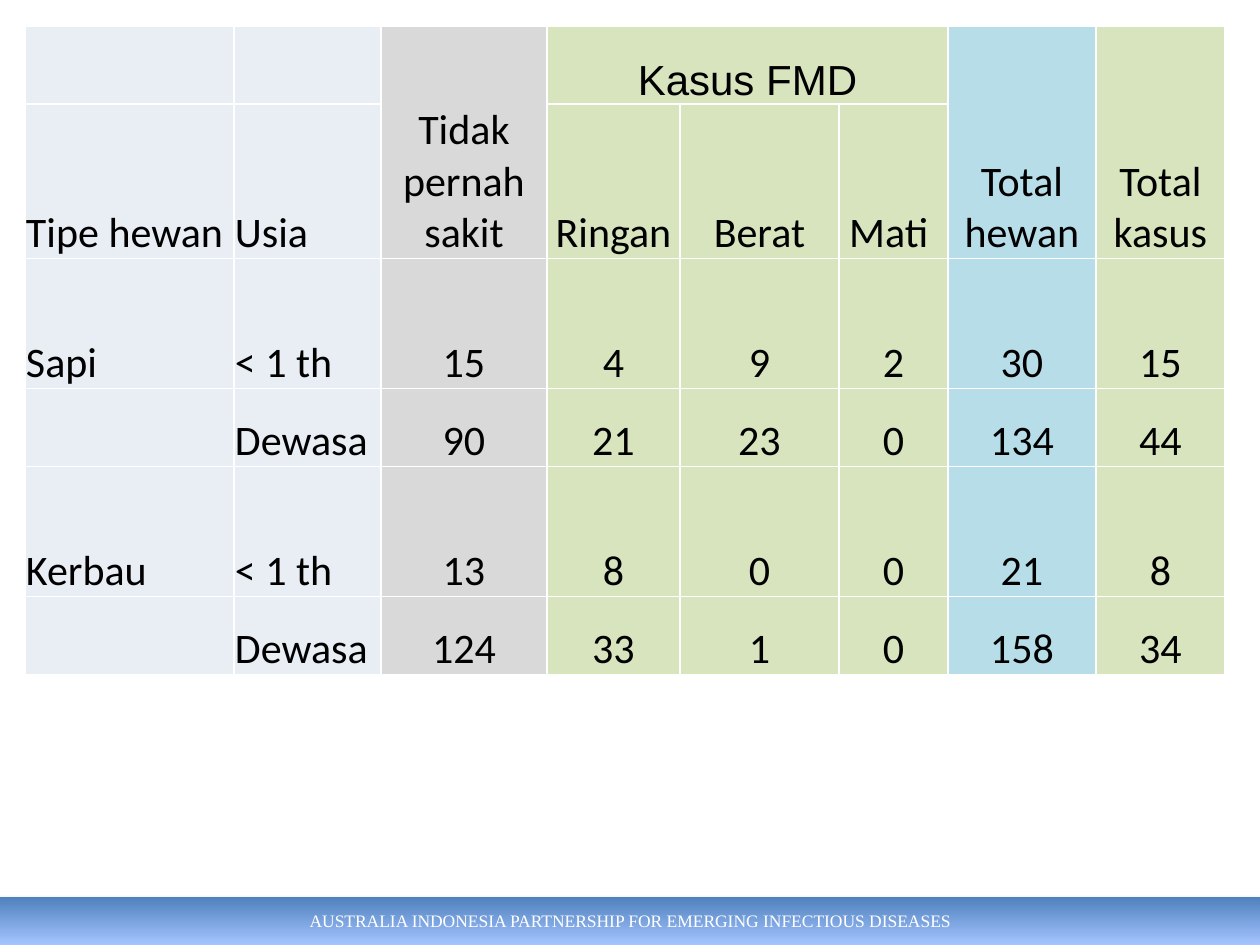
from lxml import etree
from pptx import Presentation
from pptx.dml.color import RGBColor
from pptx.enum.shapes import MSO_SHAPE as Shape
from pptx.enum.text import MSO_ANCHOR as Anchor, PP_ALIGN as Align
from pptx.oxml import parse_xml
from pptx.oxml.ns import nsdecls, qn
from pptx.util import Pt

PX = 914400 // 126
PALE, GREY, GREEN, BLUE = "E9EDF4", "D9D9D9", "D7E4BD", "B7DEE8"
COLUMN_FILLS = [PALE, PALE, GREY, GREEN, GREEN, GREEN, BLUE, GREEN]
COLUMN_WIDTHS = [209, 147, 166, 133, 159, 109, 148, 129]
ROW_HEIGHTS = [78, 130, 130, 78, 130, 78]
LABEL_COLUMNS = 2
CASES = [
    ["", "", "Tidak pernah sakit", "Kasus FMD", "", "", "Total hewan", "Total kasus"],
    ["Tipe hewan", "Usia", "", "Ringan", "Berat", "Mati ", "", ""],
    ["Sapi", "< 1 th", "15", "4", "9", "2", "30", "15"],
    ["", "Dewasa", "90", "21", "23", "0", "134", "44"],
    ["Kerbau", "< 1 th", "13", "8", "0", "0", "21", "8"],
    ["", "Dewasa", "124", "33", "1", "0", "158", "34"],
]
# First row, first column, last row, last column
MERGES = [(0, 2, 1, 2), (0, 3, 0, 5), (0, 6, 1, 6), (0, 7, 1, 7)]


def color(value):
    return RGBColor.from_string(value)


def scale(*lengths):
    return [length * PX for length in lengths]


def write(para, text, font, size, value, align):
    para.text = text
    para.alignment = align
    para.font.name = font
    para.font.size = Pt(size)
    para.font.color.rgb = color(value)


def set_borders(cell, value, width):
    properties = cell._tc.get_or_add_tcPr()
    for index, side in enumerate(("lnL", "lnR", "lnT", "lnB")):
        properties.insert(index, parse_xml(
            f'<a:{side} {nsdecls("a")} w="{Pt(width)}"><a:solidFill>'
            f'<a:srgbClr val="{value}"/></a:solidFill></a:{side}>'))


def format_cell(cell, text, font, fill, align):
    cell.vertical_anchor = Anchor.BOTTOM
    cell.margin_left = cell.margin_right = cell.margin_top = PX
    cell.margin_bottom = 0
    set_borders(cell, "FFFFFF", 1)
    cell.fill.solid()
    cell.fill.fore_color.rgb = color(fill)
    write(cell.text_frame.paragraphs[0], text, font, 24, "000000", align)


def add_case_table(page, left, top):
    box = scale(left, top, sum(COLUMN_WIDTHS), sum(ROW_HEIGHTS))
    table = page.shapes.add_table(len(CASES), len(COLUMN_WIDTHS), *box).table
    for column, width in zip(table.columns, scale(*COLUMN_WIDTHS)):
        column.width = width
    for row, height in zip(table.rows, scale(*ROW_HEIGHTS)):
        row.height = height
    for row, texts in enumerate(CASES):
        for column, text in enumerate(texts):
            font = "Arial" if text == "Kasus FMD" else "Calibri"
            align = Align.LEFT if column < LABEL_COLUMNS else Align.CENTER
            format_cell(table.cell(row, column), text, font, COLUMN_FILLS[column], align)
    for top_row, first, bottom_row, last in MERGES:
        table.cell(top_row, first).merge(table.cell(bottom_row, last))


def add_shadow(shape, value, alpha, blur, distance):
    """Drop a soft shadow straight down from the shape."""
    shape.shadow.inherit = False
    effects = shape._element.spPr.find(qn("a:effectLst"))
    shadow = etree.SubElement(
        effects, qn("a:outerShdw"), blurRad=str(Pt(blur)), dist=str(Pt(distance)),
        dir="5400000", rotWithShape="0")
    shade = etree.SubElement(shadow, qn("a:srgbClr"), val=value)
    etree.SubElement(shade, qn("a:alpha"), val=str(alpha * 1000))


def add_footer(page, left, top, width, height):
    bar = page.shapes.add_shape(Shape.RECTANGLE, *scale(left, top, width, height))
    bar.fill.gradient()
    bar.fill.gradient_angle = 270
    for stop, value in zip(bar.fill.gradient_stops, ("4F81BD", "A4C4FF")):
        stop.color.rgb = color(value)
    stops = bar.fill.gradient_stops
    stops[0].position, stops[1].position = 0, 1
    bar.line.fill.background()
    add_shadow(bar, "000000", 35, 3.1, 1.8)
    frame = bar.text_frame
    frame.word_wrap = True
    frame.vertical_anchor = Anchor.MIDDLE
    write(frame.paragraphs[0],
          "AUSTRALIA INDONESIA PARTNERSHIP FOR EMERGING INFECTIOUS DISEASES",
          "Times New Roman", 10, "FFFFFF", Align.CENTER)


def main():
    deck = Presentation()
    deck.slide_width, deck.slide_height = scale(1260, 945)
    page = deck.slides.add_slide(deck.slide_layouts[6])
    add_footer(page, 0, 897, 1260, 48)
    add_case_table(page, 25, 26)
    deck.save("out.pptx")


if __name__ == "__main__":
    main()
